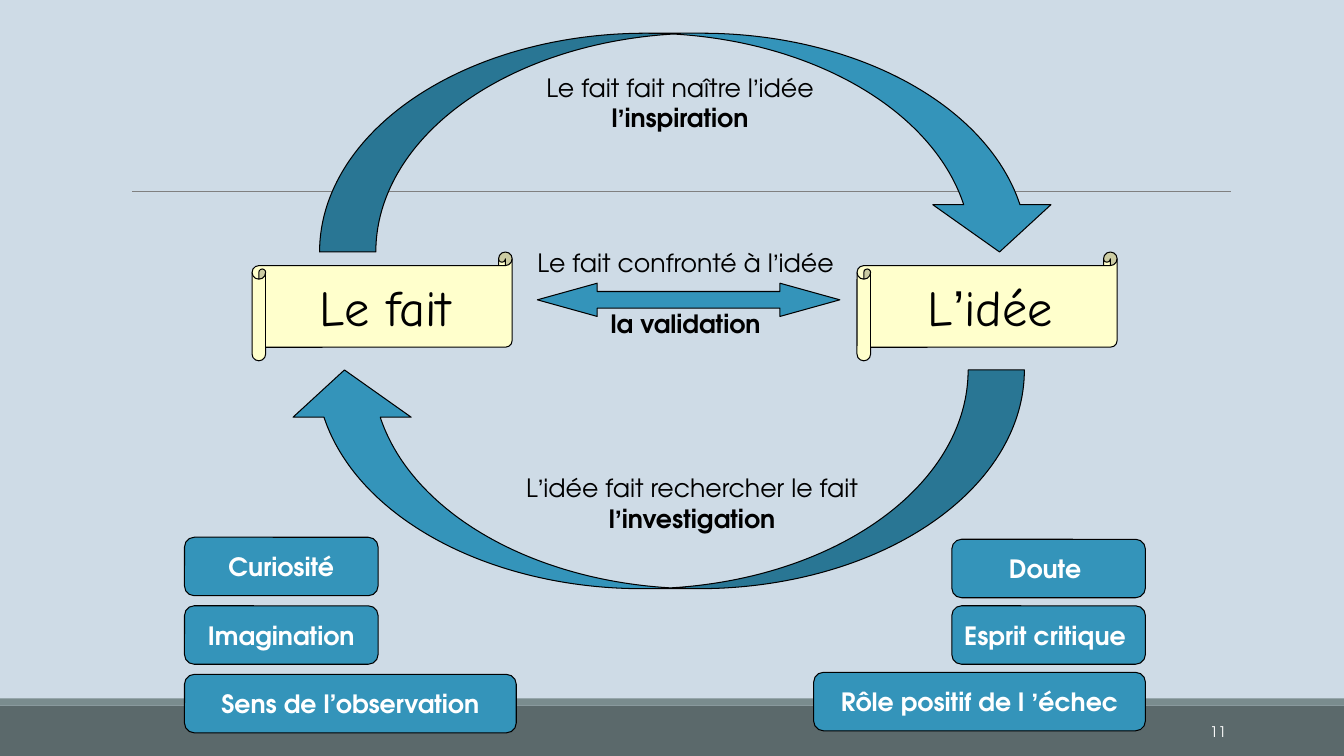
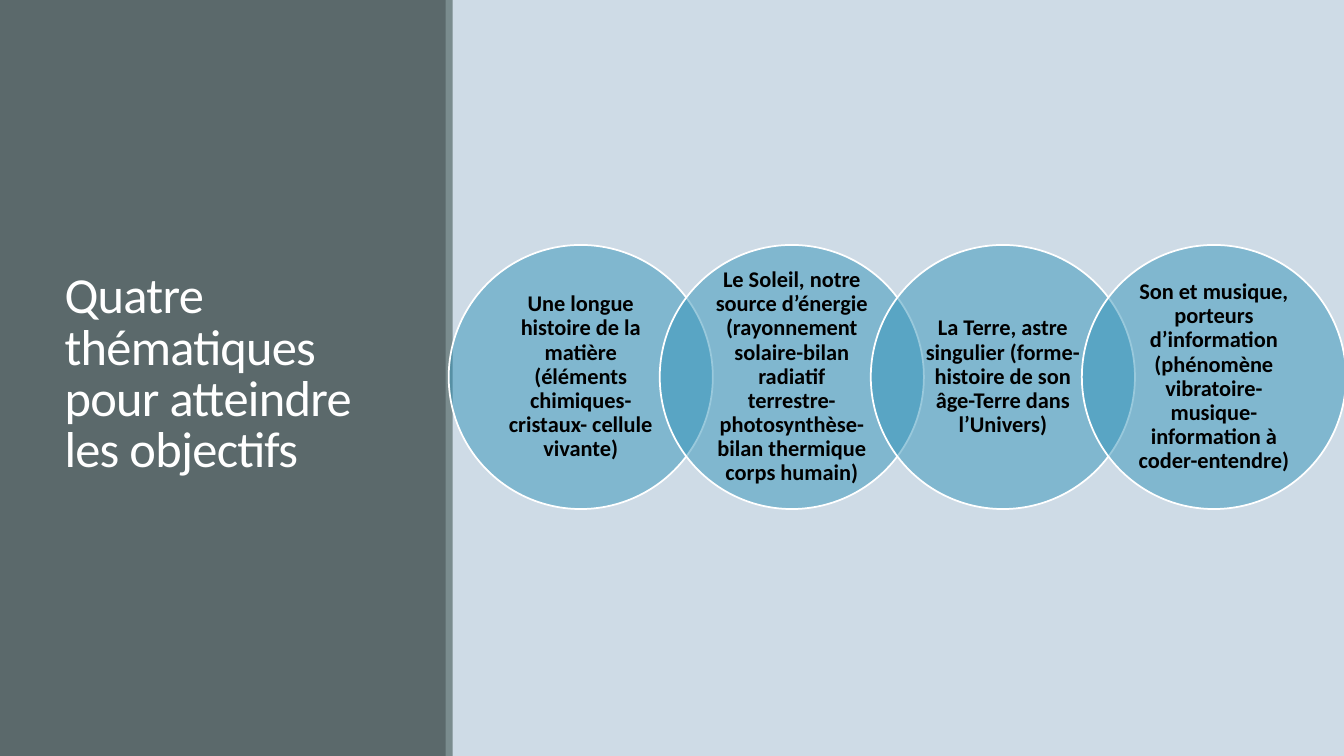
"""Build two slides on facts and ideas, and on four teaching themes."""
from dataclasses import dataclass
from typing import Optional

from lxml import etree
from pptx import Presentation
from pptx.dml.color import RGBColor
from pptx.enum.shapes import MSO_CONNECTOR, MSO_SHAPE
from pptx.enum.text import MSO_ANCHOR, MSO_AUTO_SIZE, PP_ALIGN
from pptx.oxml.ns import qn
from pptx.util import Inches, Pt

RECTANGLE = MSO_SHAPE.RECTANGLE
ROUNDED = MSO_SHAPE.ROUNDED_RECTANGLE
SCROLL = MSO_SHAPE.HORIZONTAL_SCROLL
CURVED_ARROW = MSO_SHAPE.CURVED_DOWN_ARROW
DOUBLE_ARROW = MSO_SHAPE.LEFT_RIGHT_ARROW
OVAL = MSO_SHAPE.OVAL
STRAIGHT = MSO_CONNECTOR.STRAIGHT
LEFT, CENTER, RIGHT = PP_ALIGN.LEFT, PP_ALIGN.CENTER, PP_ALIGN.RIGHT
TOP, MIDDLE = MSO_ANCHOR.TOP, MSO_ANCHOR.MIDDLE
NO_AUTOFIT = MSO_AUTO_SIZE.NONE

COLORS = {
    "background": "CEDBE6", "band": "5B696B", "stripe": "7A8C8E",
    "rule": "808080", "blue": "3494BA", "scroll": "FFFFCC",
    "black": "000000", "white": "FFFFFF",
}
GEOMETRIC, HANDWRITTEN, SANS, PLAIN = (
    "TeX Gyre Adventor", "Comic Neue", "Calibri", "Arial")
WIDTH, HEIGHT = 13.33, 7.5
TITLE_ONLY, BLANK = 5, 6


@dataclass(frozen=True)
class Box:
    left: float
    top: float
    width: float
    height: float

    def lengths(self) -> tuple:
        return tuple(Inches(value) for value in
                     (self.left, self.top, self.width, self.height))


@dataclass(frozen=True)
class Quality:
    text: str
    box: Box
    apostrophe: Optional[str] = None


@dataclass(frozen=True)
class Caption:
    lines: tuple
    box: Box
    gap: float = 0


CURVED_ARROWS = ((Box(3.17, 0.33, 7.33, 2.17), 0),
                 (Box(2.83, 3.67, 7.33, 2.17), 180))
SCROLLS = (("Le fait", 2.5), ("L’idée", 8.5))
NARROW, WIDE, QUALITY_HEIGHT = 1.92, 3.29, 0.58
LEFT_EDGE, RIGHT_EDGE = 1.83, 11.36
QUALITIES = (
    *(Quality(text, Box(LEFT_EDGE, 5.33 + 0.68 * row, width, QUALITY_HEIGHT))
      for row, (text, width) in enumerate((
          ("Curiosité", NARROW), ("Imagination", NARROW),
          ("Sens de l’observation", WIDE)))),
    *(Quality(text, Box(RIGHT_EDGE - width, 5.35 + 0.66 * row, width,
                        QUALITY_HEIGHT), PLAIN)
      for row, (text, width) in enumerate((
          ("Doute ", NARROW), ("Esprit critique ", NARROW),
          ("Rôle positif de l ’échec", WIDE)))),
)
CAPTIONS = (
    Caption(("Le fait confronté à l’idée", "la validation"),
            Box(5.17, 2.4, 3.26, 1.01), 22),
    Caption(("Le fait fait naître l’idée", "l’inspiration"),
            Box(5.26, 0.67, 2.97, 0.71)),
    Caption(("L’idée fait rechercher le fait", "l’investigation"),
            Box(5.05, 4.64, 3.63, 0.71)),
)
THEMES = (
    "Une longue histoire de la matière (éléments chimiques- cristaux- "
    "cellule vivante)",
    "Le Soleil, notre source d’énergie (rayonnement solaire-bilan radiatif "
    "terrestre-photosynthèse- bilan thermique corps humain)",
    "La Terre, astre singulier (forme-histoire de son âge-Terre dans "
    "l’Univers)",
    "Son et musique, porteurs d’information (phénomène "
    "vibratoire-musique-information à coder-entendre)",
)
FIRST_CIRCLE, LAST_CIRCLE, CIRCLE_TOP, DIAMETER = 4.45, 10.73, 2.43, 2.62


def rgb(color: str) -> RGBColor:
    return RGBColor.from_string(COLORS[color])


def add_figure(slide, kind, box: Box, fill: str, line: Optional[str] = None,
               line_width: float = 0.75, adjustments: tuple = (),
               opacity: int = 100):
    shape = slide.shapes.add_shape(kind, *box.lengths())
    shape.shadow.inherit = False
    shape.fill.solid()
    shape.fill.fore_color.rgb = rgb(fill)
    if opacity < 100:
        color = shape.fill._xPr.find(qn("a:solidFill"))[0]
        etree.SubElement(color, qn("a:alpha"), val=str(opacity * 1000))
    if line:
        shape.line.color.rgb = rgb(line)
        shape.line.width = Pt(line_width)
    else:
        shape.line.fill.background()
    for index, value in enumerate(adjustments):
        shape.adjustments[index] = value
    return shape


def write_text(shape, *lines: str, font: str = GEOMETRIC, size: float = 18,
               color: str = "black", bold: bool = False,
               bold_last: bool = False, align=CENTER, anchor=MIDDLE,
               wrap: bool = False, insets: tuple = (0.1, 0.05),
               line_spacing: float = 1, gap: float = 0, tracking: int = 0,
               apostrophe: Optional[str] = None) -> None:
    frame = shape.text_frame
    frame.auto_size = NO_AUTOFIT
    frame.word_wrap = wrap
    frame.vertical_anchor = anchor
    frame.margin_left = frame.margin_right = Inches(insets[0])
    frame.margin_top = frame.margin_bottom = Inches(insets[1])
    for index, line in enumerate(lines):
        paragraph = frame.add_paragraph() if index else frame.paragraphs[0]
        paragraph.alignment = align
        paragraph.line_spacing = line_spacing
        paragraph.space_before = Pt(gap if index else 0)
        last = index == len(lines) - 1
        pieces = line.partition("’") if apostrophe else (line,)
        for piece in filter(None, pieces):
            run = paragraph.add_run()
            run.text = piece
            run.font.name = apostrophe if piece == "’" else font
            run.font.size = Pt(size)
            run.font.bold = bold or (bold_last and last)
            run.font.color.rgb = rgb(color)
            if tracking:
                run.font._element.set("spc", str(tracking))


def add_rule(slide, left: float, right: float, top: float) -> None:
    rule = slide.shapes.add_connector(
        STRAIGHT, Inches(left), Inches(top), Inches(right), Inches(top))
    rule.line.color.rgb = rgb("rule")
    rule.line.width = Pt(0.5)
    etree.SubElement(rule._element.spPr, qn("a:effectLst"))


def add_bands(slide, band: Box, stripe: Box) -> None:
    add_figure(slide, RECTANGLE, band, "band")
    add_figure(slide, RECTANGLE, stripe, "stripe")


def build_cycle_slide(presentation) -> None:
    slide = presentation.slides.add_slide(presentation.slide_layouts[BLANK])
    add_bands(slide, Box(0, 7, WIDTH, 0.5), Box(0, 6.93, WIDTH, 0.07))
    add_rule(slide, 1.31, 12.21, 1.9)
    for quality in QUALITIES:
        shape = add_figure(slide, ROUNDED, quality.box, "blue", "black",
                           adjustments=(0.167,))
        write_text(shape, quality.text, color="white", bold=True,
                   apostrophe=quality.apostrophe)
    for text, left in SCROLLS:
        shape = add_figure(slide, SCROLL, Box(left, 2.5, 2.58, 1.08),
                           "scroll", "black", adjustments=(0.125,))
        write_text(shape, text, font=HANDWRITTEN, size=36, apostrophe=PLAIN)
    for box, rotation in CURVED_ARROWS:
        shape = add_figure(slide, CURVED_ARROW, box, "blue", "black",
                           adjustments=(0.257, 0.54, 0.216))
        shape.rotation = rotation
    for caption in CAPTIONS:
        shape = slide.shapes.add_textbox(*caption.box.lengths())
        write_text(shape, *caption.lines, bold_last=True, anchor=TOP,
                   gap=caption.gap, apostrophe=PLAIN)
    add_figure(slide, DOUBLE_ARROW, Box(5.33, 2.81, 3, 0.33), "blue", "black",
               adjustments=(0.5, 1.8))
    number = slide.shapes.add_textbox(*Box(10.83, 7.06, 1.43, 0.4).lengths())
    write_text(number, "11", size=10.5, color="white", align=RIGHT, wrap=True)


def build_themes_slide(presentation) -> None:
    slide = presentation.slides.add_slide(
        presentation.slide_layouts[TITLE_ONLY])
    add_bands(slide, Box(0, 0, 4.43, HEIGHT), Box(4.42, 0, 0.07, HEIGHT))
    title = slide.shapes.title
    slide.shapes._spTree.append(title._element)
    title.left, title.top, title.width, title.height = Box(
        0.54, 0.57, 3.37, 6.31).lengths()
    write_text(title, "Quatre thématiques pour atteindre les objectifs",
               font=SANS, size=36, color="white", align=LEFT, wrap=True,
               line_spacing=0.85, tracking=-50)
    pitch = (LAST_CIRCLE - FIRST_CIRCLE) / (len(THEMES) - 1)
    for index, theme in enumerate(THEMES):
        box = Box(FIRST_CIRCLE + index * pitch, CIRCLE_TOP, DIAMETER, DIAMETER)
        circle = add_figure(slide, OVAL, box, "blue", "white",
                            line_width=1.25, opacity=50)
        write_text(circle, theme, font=SANS, size=16, bold=True, wrap=True,
                   insets=(0.14, 0.02), line_spacing=0.9)


def main() -> None:
    presentation = Presentation()
    presentation.slide_width = Inches(WIDTH)
    presentation.slide_height = Inches(HEIGHT)
    background = presentation.slide_master.background.fill
    background.solid()
    background.fore_color.rgb = rgb("background")
    build_cycle_slide(presentation)
    build_themes_slide(presentation)
    presentation.save("out.pptx")


if __name__ == "__main__":
    main()
